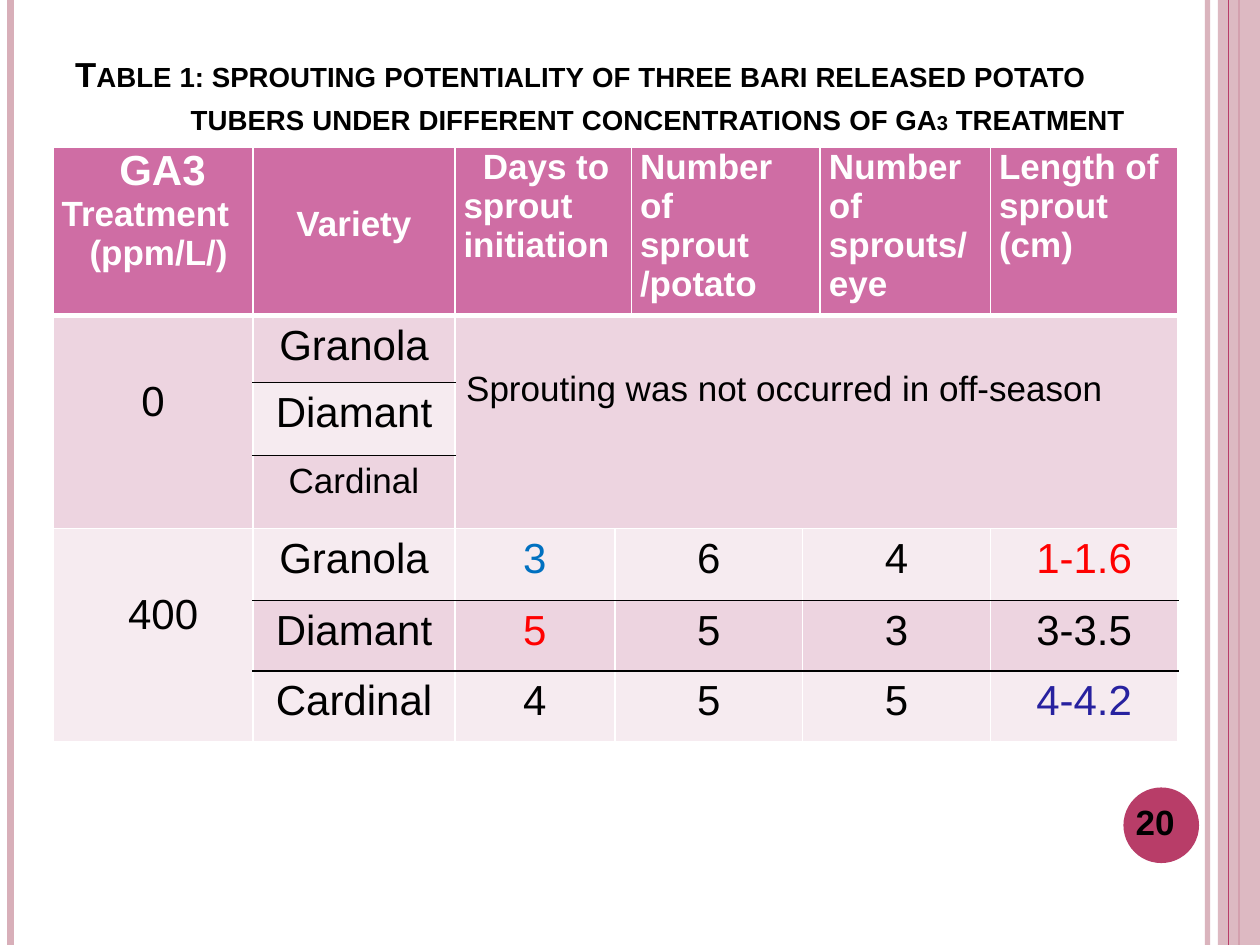
from lxml.etree import SubElement
from pptx import Presentation
from pptx.dml.color import RGBColor
from pptx.enum.shapes import MSO_CONNECTOR as CONN, MSO_SHAPE as SHAPE
from pptx.enum.text import PP_ALIGN as ALIGN
from pptx.oxml.ns import qn
from pptx.util import Pt

WHITE = RGBColor(0xFF, 0xFF, 0xFF)
BLACK = RGBColor(0, 0, 0)
BLUE = RGBColor(0x00, 0x70, 0xC0)
RED = RGBColor(0xFF, 0, 0)
INDIGO = RGBColor(0x27, 0x21, 0x9F)
ROSE = RGBColor(0xD8, 0xAF, 0xB9)
CRIMSON = RGBColor(0xB8, 0x3D, 0x68)
HEADER = RGBColor(0xCF, 0x6D, 0xA4)
BANDS = [RGBColor(0xED, 0xD4, 0xE0), RGBColor(0xF6, 0xEB, 0xF0)]

WIDTH, HEIGHT = 720, 540
COLS = [114.5, 115.2, 91.5, 9.4, 97.9, 10.1, 97.2, 107.2]
ROWS = [95.8, 38.2, 41.8, 41.8, 41, 40.3, 40.3]
VARIETIES = ["Granola", "Diamant", "Cardinal"]
RESULTS = [
    [("3", BLUE), ("6", BLACK), ("4", BLACK), ("1-1.6", RED)],
    [("5", RED), ("5", BLACK), ("3", BLACK), ("3-3.5", BLACK)],
    [("4", BLACK), ("5", BLACK), ("5", BLACK), ("4-4.2", INDIGO)],
]


def set_alpha(fill, percent):
    """Make a solid colour partly transparent."""
    SubElement(fill.find(".//" + qn("a:srgbClr")), qn("a:alpha"), val=str(percent * 1000))


def add_rule(s, x, color, width, alpha=100):
    """Full-height vertical line."""
    line = s.shapes.add_connector(CONN.STRAIGHT, Pt(x), 0, Pt(x), Pt(HEIGHT))
    line.line.color.rgb = color
    line.line.width = Pt(width)
    SubElement(line._element.spPr, qn("a:effectLst"))
    if alpha < 100:
        set_alpha(line._element.spPr, alpha)


def add_block(s, kind, x, y, w, h, color, alpha=100):
    sp = s.shapes.add_shape(kind, Pt(x), Pt(y), Pt(w), Pt(h))
    sp.shadow.inherit = False
    sp.fill.solid()
    sp.fill.fore_color.rgb = color
    sp.line.fill.background()
    if alpha < 100:
        set_alpha(sp._element.spPr, alpha)


def add_box(s, x, y, w, h):
    tf = s.shapes.add_textbox(Pt(x), Pt(y), Pt(w), Pt(h)).text_frame
    tf.word_wrap = True
    tf.margin_left = tf.margin_right = tf.margin_top = tf.margin_bottom = 0
    return tf


def style(p, size, color=BLACK, bold=False, align=ALIGN.LEFT, left=0, first=0):
    """Format a paragraph; left and first are its indents."""
    p.alignment = align
    pPr = p._p.get_or_add_pPr()
    pPr.set("marL", str(Pt(left)))
    pPr.set("indent", str(Pt(first)))
    f = p.font
    f.name, f.size, f.bold, f.color.rgb = "Arial", Pt(size), bold, color


def add_title(s):
    tf = add_box(s, 43, 30, 640, 50)
    lines = [
        (0, [("Table 1: sprouting potentiality of three bari released potato", 19.8)]),
        (66, [("tubers under different concentrations of ga", 19.8), ("3", 14.4),
              (" treatment", 19.8)]),
    ]
    for i, (left, runs) in enumerate(lines):
        p = tf.add_paragraph() if i else tf.paragraphs[0]
        style(p, 19.8, bold=True, left=left)
        if i:
            p.space_before = Pt(1)
        for text, size in runs:
            r = p.add_run()
            r.text = text
            r.font.size = Pt(size)
            r._r.get_or_add_rPr().set("cap", "small")


def add_border(cell, side, color, width):
    ln = SubElement(cell._tc.get_or_add_tcPr(), qn("a:" + side), w=str(Pt(width)))
    SubElement(SubElement(ln, qn("a:solidFill")), qn("a:srgbClr"), val=str(color))


def set_look(cell, row, col):
    """Borders and banded fill; thin black lines part the varieties."""
    def parted(edge):
        inside = edge in (2, 3, 5, 6)
        return inside and col > 0 and (col == 1 or edge > 4)

    top = BLACK if parted(row) else WHITE
    bottom = BLACK if parted(row + 1) else WHITE
    add_border(cell, "lnL", WHITE, 1)
    add_border(cell, "lnR", WHITE, 1)
    add_border(cell, "lnT", top, 3 if row == 1 else 1)
    add_border(cell, "lnB", bottom, 3 if row == 0 else 1)
    cell.fill.solid()
    cell.fill.fore_color.rgb = BANDS[(row - 1) % 2] if row else HEADER
    cell.margin_left = cell.margin_right = Pt(5)
    cell.margin_top = cell.margin_bottom = 0


def fill_cell(cell, text, size=24, spacing=1.15, top=0, **look):
    cell.margin_top = Pt(top)
    p = cell.text_frame.paragraphs[0]
    p.text = text
    style(p, size, **look)
    p.line_spacing = spacing


def fill_header(table):
    first = table.cell(0, 0).text_frame
    lines = [("GA3", 24, 33), ("Treatment", 20, 0), ("(ppm/L/)", 20, 16)]
    for i, (text, size, left) in enumerate(lines):
        p = first.add_paragraph() if i else first.paragraphs[0]
        p.text = text
        style(p, size, WHITE, True, left=left)
    look = dict(size=20, spacing=1.0, color=WHITE, bold=True)
    fill_cell(table.cell(0, 1), "Variety", top=33, align=ALIGN.CENTER, **look)
    fill_cell(table.cell(0, 2), "Days to sprout initiation", first=11, **look)
    for col, text in [(4, "Number of sprout /potato"), (6, "Number of sprouts/ eye"),
                      (7, "Length of sprout (cm)")]:
        fill_cell(table.cell(0, col), text, **look)


def fill_body(table):
    fill_cell(table.cell(1, 0), "0", top=32, align=ALIGN.CENTER)
    fill_cell(table.cell(4, 0), "400", top=32, left=38)
    note = table.cell(1, 2)
    fill_cell(note, "Sprouting was not occurred in off-season", 20, 1.0, top=31)
    note.margin_left = Pt(6.5)
    for i, variety in enumerate(VARIETIES):
        for row in (1 + i, 4 + i):
            size = 20 if row == 3 else 24
            fill_cell(table.cell(row, 1), variety, size, align=ALIGN.CENTER)
        for col, (value, color) in zip((2, 3, 5, 7), RESULTS[i]):
            fill_cell(table.cell(4 + i, col), value, color=color, align=ALIGN.CENTER)


def add_sprouting_table(s):
    table = s.shapes.add_table(len(ROWS), len(COLS), Pt(30.2), Pt(84.3),
                               Pt(sum(COLS)), Pt(sum(ROWS))).table
    for column, width in zip(table.columns, COLS):
        column.width = Pt(width)
    for row, height in zip(table.rows, ROWS):
        row.height = Pt(height)
    for r in range(len(ROWS)):
        for c in range(len(COLS)):
            set_look(table.cell(r, c), r, c)
    spans = [(0, 2, 0, 3), (0, 4, 0, 5), (1, 0, 3, 0), (1, 2, 3, 7), (4, 0, 6, 0)]
    spans += [(r, c, r, c + 1) for r in (4, 5, 6) for c in (3, 5)]
    for top, left, bottom, right in spans:
        table.cell(top, left).merge(table.cell(bottom, right))
    fill_header(table)
    fill_body(table)


def add_page_number(s):
    p = add_box(s, 636, 457.5, 48, 24).paragraphs[0]
    p.text = "20"
    style(p, 20, bold=True, align=ALIGN.CENTER)


def main():
    prs = Presentation()
    prs.slide_width, prs.slide_height = Pt(WIDTH), Pt(HEIGHT)
    s = prs.slides.add_slide(prs.slide_layouts[6])
    add_rule(s, 690, ROSE, 3, 93)
    add_rule(s, 6, ROSE, 4.5)
    add_rule(s, 708, CRIMSON, 1.5)
    add_block(s, SHAPE.RECTANGLE, 696, 0, 24, HEIGHT, ROSE, 87)
    add_rule(s, 702, CRIMSON, 0.75)
    add_block(s, SHAPE.OVAL, 642, 450, 43.2, 43.2, CRIMSON)
    add_title(s)
    add_sprouting_table(s)
    add_page_number(s)
    prs.save("out.pptx")


if __name__ == "__main__":
    main()
